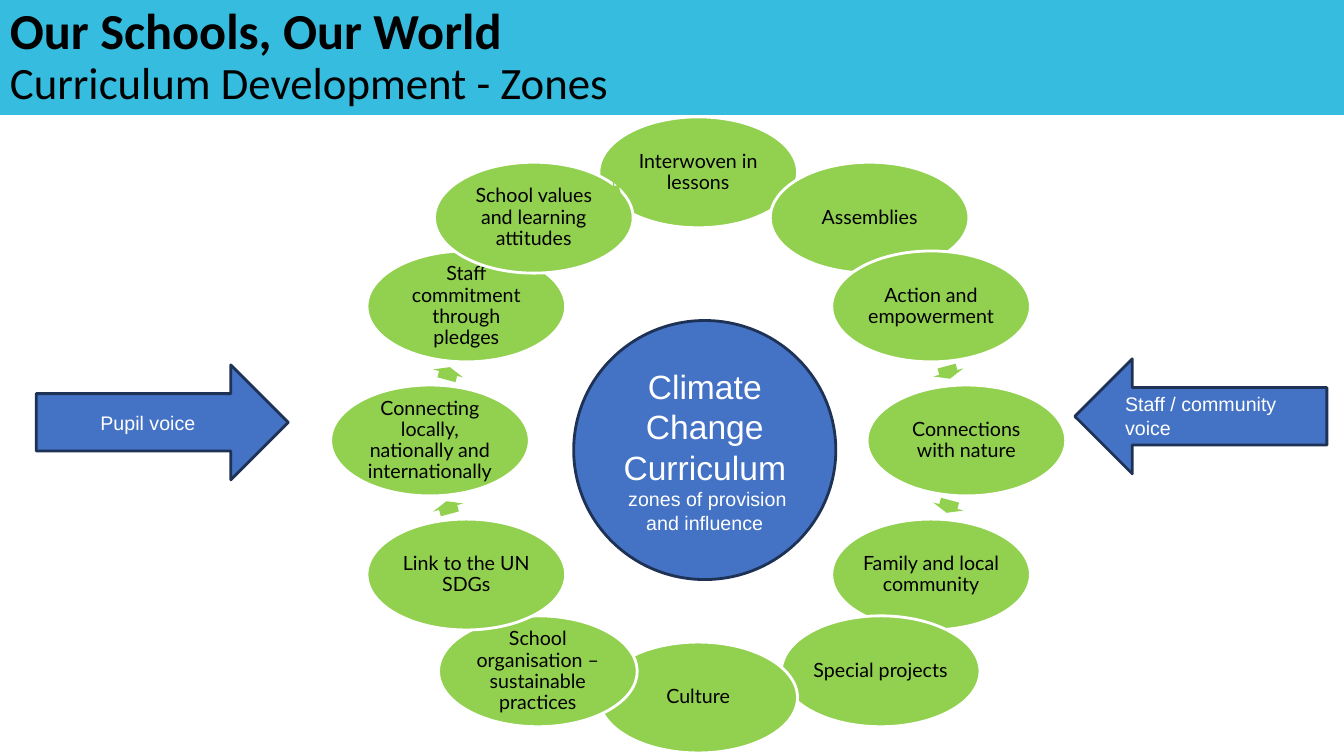
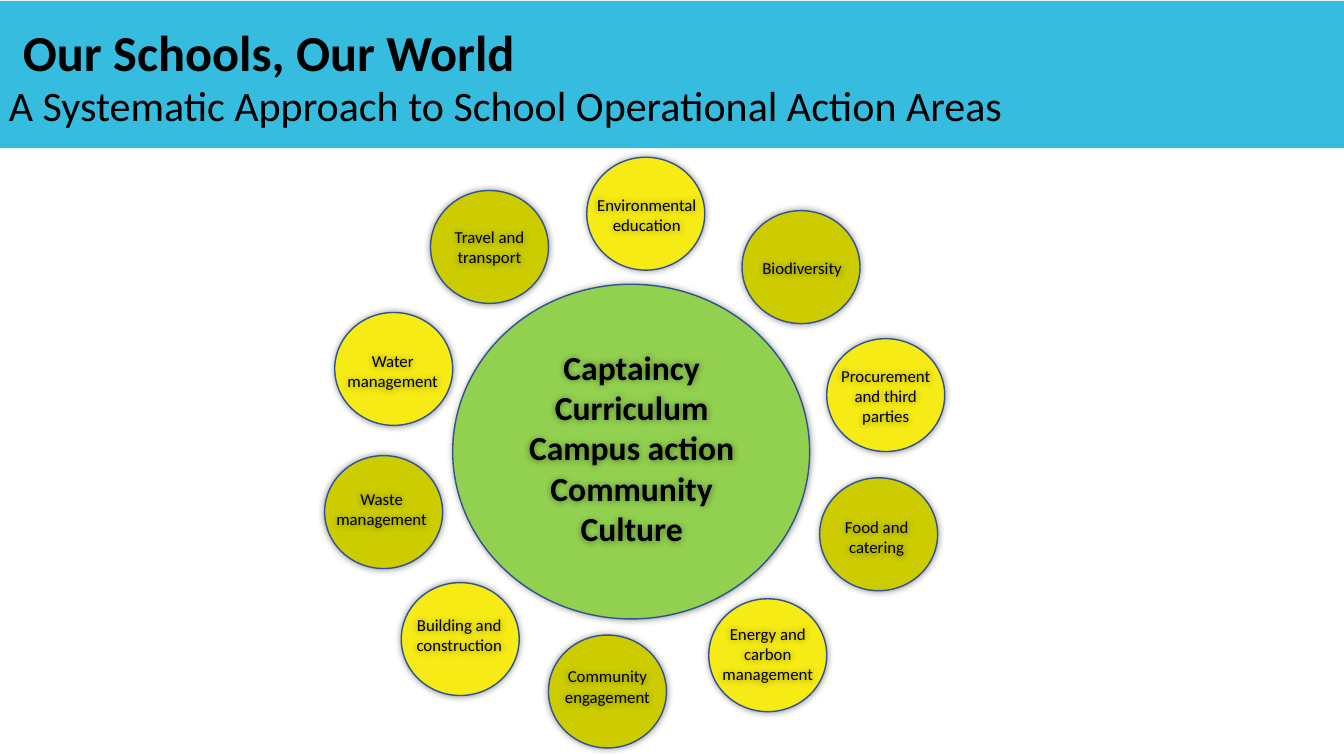
from lxml import etree
from pptx import Presentation
from pptx.dml.color import RGBColor
from pptx.enum.shapes import MSO_SHAPE as Preset
from pptx.enum.text import MSO_ANCHOR as Anchor, PP_ALIGN as Align
from pptx.oxml import parse_xml
from pptx.oxml.ns import qn
from pptx.util import Inches, Pt

COLORS = {
    "band": "35BCDE", "green": "92D050", "blue": "4472C4", "navy": "1E3256",
    "outline": "31538F", "yellow": "F6EB14", "olive": "CCCC00",
    "black": "000000", "white": "FFFFFF",
}
SHADOW = (
    '<a:outerShdw xmlns:a="http://schemas.openxmlformats.org/drawingml/2006/main" '
    'blurRad="63500" dist="0" dir="0" rotWithShape="0">'
    '<a:srgbClr val="000000"><a:alpha val="40000"/></a:srgbClr></a:outerShdw>'
)
BAND_TEXT = {"font": "Calibri", "color": "black", "align": Align.LEFT, "spacing": 0.9}
ZONE_TEXT = {"font": "Lato", "color": "black", "spacing": 0.9, "inset": 0.02}
CENTER_TEXT = {"font": "Arial", "color": "white"}
LABEL_TEXT = {"font": "Calibri", "color": "black", "anchor": Anchor.TOP}


def write(box, paragraphs, font, color, align=Align.CENTER, anchor=Anchor.MIDDLE,
          spacing=1.0, inset=None):
    frame = box.text_frame
    frame.word_wrap = True
    frame.vertical_anchor = anchor
    if inset is not None:
        for side in ("left", "top", "right", "bottom"):
            setattr(frame, f"margin_{side}", Inches(inset))
    for index, spans in enumerate(paragraphs):
        para = frame.add_paragraph() if index else frame.paragraphs[0]
        para.alignment = align
        para.line_spacing = spacing
        for text, size, bold in spans:
            if text == "\n":
                para.add_line_break()
                continue
            span = para.add_run()
            span.text = text
            style = {"name": font, "size": Pt(size), "bold": bold}
            for key, value in style.items():
                setattr(span.font, key, value)
            span.font.color.rgb = RGBColor.from_string(COLORS[color])


def draw(page, preset, place, fill=None, line=None, width=1, rotation=0, shadow=False):
    bounds = [Inches(value) for value in place]
    if preset is None:
        box = page.shapes.add_textbox(*bounds)
    else:
        box = page.shapes.add_shape(preset, *bounds)
        box.fill.solid()
        box.fill.fore_color.rgb = RGBColor.from_string(COLORS[fill])
        if line:
            box.line.color.rgb = RGBColor.from_string(COLORS[line])
            box.line.width = Pt(width)
        else:
            box.line.fill.background()
        box.rotation = rotation
    box.shadow.inherit = False
    if shadow:
        effects = box._element.spPr.find(qn("a:effectLst"))
        effects.append(parse_xml(SHADOW))
    return box


deck = Presentation()
deck.slide_width, deck.slide_height = Inches(13.33), Inches(7.5)
blank = deck.slide_layouts[6]
heading = ("Our Schools, Our World", 36, True)

page = deck.slides.add_slide(blank)
zones = [
    (5.94, 1.16, "Interwoven in lessons", 7.76, 1.78, 0.04, 194.8),
    (7.64, 1.61, "Assemblies", 8.88, 2.45, 0.1, 235.6),
    (8.25, 2.49, "Action and empowerment", 9.34, 3.54, 0.13, 75),
    (8.6, 3.82, "Connections with nature", 9.34, 4.87, 0.13, 105),
    (8.25, 5.15, "Family and local community", 8.95, 6.02, 0.06, 297.2),
    (7.75, 6.11, "Special projects", 7.81, 6.64, 0.05, 351.7),
    (5.94, 6.37, "Culture", 6.05, 6.63, 0.16, 9.5),
    (4.35, 6.11, "School organisation – sustainable practices", 4.96, 6.02, 0.04, 53.4),
    (3.64, 5.15, "Link to the UN SDGs", 4.38, 4.88, 0.13, 255),
    (3.28, 3.82, "Connecting locally, nationally and internationally", 4.38, 3.55, 0.13, 285),
    (3.64, 2.49, "Staff commitment through pledges", 4.92, 2.44, 0.09, 127.5),
    (4.31, 1.61, "School values and learning attitudes", 6.08, 1.78, 0.08, 164.6),
]
for left, top, label, arrow_left, arrow_top, arrow_width, angle in zones:
    zone = draw(page, Preset.OVAL, (left, top, 1.97, 1.1), "green", "white", 2)
    write(zone, [[(label, 14, False)]], **ZONE_TEXT)
    arrow = draw(page, Preset.RIGHT_ARROW, (arrow_left, arrow_top, arrow_width, 0.31),
                 "green", rotation=angle)
    arrow.adjustments[0] = 0.6

center = draw(page, Preset.OVAL, (5.69, 3.18, 2.6, 2.57), "blue", "navy", 2)
write(center, [[("Climate Change Curriculum ", 24, False),
                (" zones of provision and influence", 14, False)]], **CENTER_TEXT)
pupils = draw(page, Preset.RIGHT_ARROW, (0.36, 3.62, 2.5, 1.14), "blue", "navy", 2)
write(pupils, [[("Pupil voice", 14, False)]], **CENTER_TEXT)
draw(page, Preset.RIGHT_ARROW, (10.66, 3.56, 2.5, 1.14), "blue", "navy", 2, 180)
staff = draw(page, None, (11.06, 3.84, 2.19, 0.57))
write(staff, [[("Staff / community voice", 14, False)]], align=Align.LEFT,
      anchor=Anchor.TOP, **CENTER_TEXT)
band = draw(page, Preset.RECTANGLE, (0, 0, 13.34, 1.14), "band")
write(band, [[heading, ("\n", 36, True), ("Curriculum Development - Zones", 32, False)]],
      **BAND_TEXT)

page = deck.slides.add_slide(blank)
band = draw(page, Preset.RECTANGLE, (-0.01, 0.01, 13.44, 1.46), "band")
write(band, [[(" ", 44, False), heading, ("\n", 36, True),
              ("A Systematic Approach to School Operational Action Areas", 30, False)]],
      **BAND_TEXT)
draw(page, Preset.OVAL, (4.49, 2.82, 3.54, 3.32), "green", "outline", shadow=True)
themes = draw(page, None, (4.85, 3.39, 2.83, 2.12), shadow=True)
names = ["Captaincy", "Curriculum", "Campus action", "Community Culture"]
write(themes, [[(name, 24, True)] for name in names], **LABEL_TEXT)

areas = [
    (7.03, 5.94, 6.96, 6.14, "Energy and carbon management"),
    (8.13, 4.74, 8.04, 5.08, "Food and catering"),
    (8.2, 3.36, 8.13, 3.58, "Procurement and third parties"),
    (7.36, 2.09, 7.3, 2.51, "Biodiversity"),
    (5.82, 1.56, 5.76, 1.88, "Environmental education"),
    (4.27, 1.89, 4.2, 2.2, "Travel and transport"),
    (3.32, 3.1, 3.24, 3.43, "Water management"),
    (3.22, 4.52, 3.13, 4.8, "Waste management"),
    (3.98, 5.78, 3.9, 6.05, "Building and construction"),
    (5.44, 6.3, 5.37, 6.56, "Community engagement"),
]
for index, (left, top, label_left, label_top, label) in enumerate(areas):
    fill = ("yellow", "olive")[index % 2]
    draw(page, Preset.OVAL, (left, top, 1.17, 1.12), fill, "outline", shadow=True)
    caption = draw(page, None, (label_left, label_top, 1.31, 0.5), shadow=True)
    write(caption, [[(label, 12, False)]], **LABEL_TEXT)

deck.save("out.pptx")
